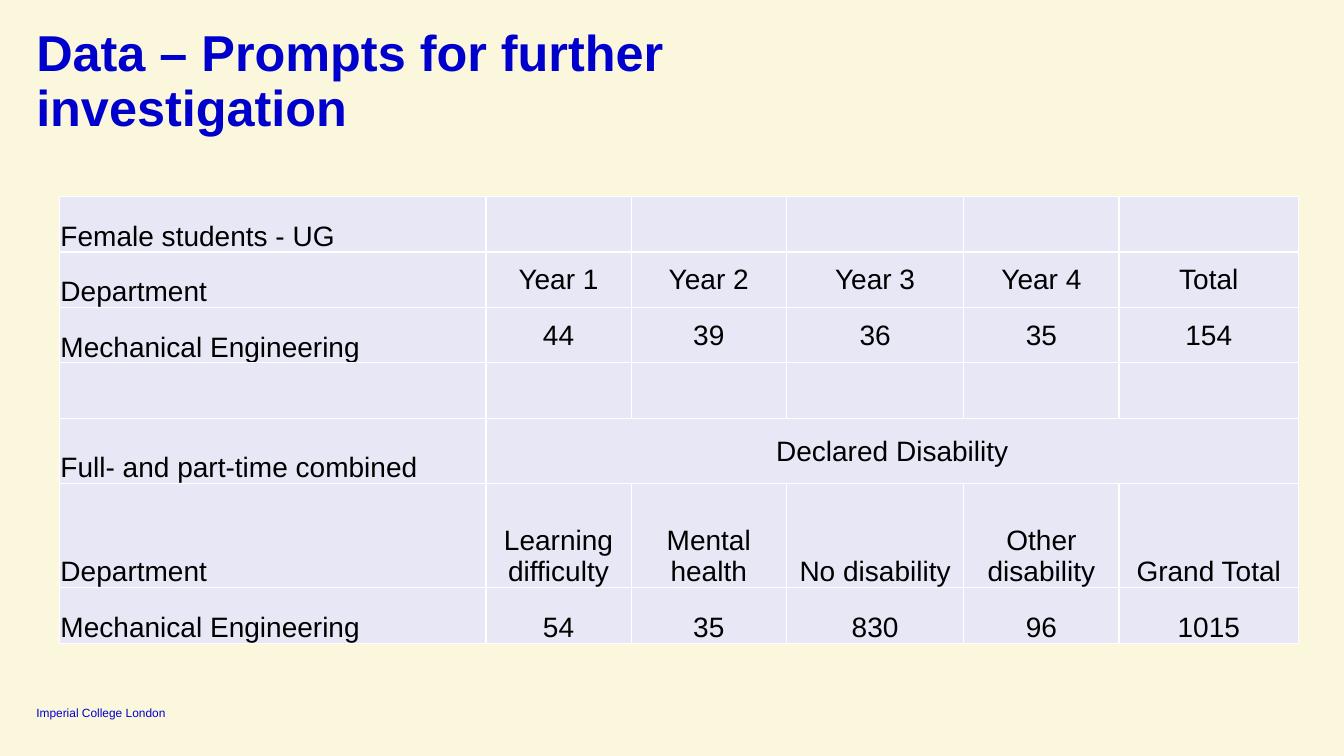
from dataclasses import dataclass

from lxml.etree import SubElement
from pptx import Presentation
from pptx.dml.color import RGBColor as RGB
from pptx.enum.text import MSO_ANCHOR as Anchor, MSO_AUTO_SIZE as AutoSize, PP_ALIGN as Align
from pptx.oxml.ns import qn
from pptx.table import Table, _Cell as Cell
from pptx.text.text import TextFrame
from pptx.util import Inches, Pt


@dataclass(frozen=True)
class Theme:
    font: str = "Arial"
    background: str = "FBF7DC"
    accent: str = "0000CD"
    text: str = "000000"
    cell: str = "E7E7F6"
    border: str = "FFFFFF"
    border_pt: float = 1
    title_pt: float = 36
    table_pt: float = 20
    footer_pt: float = 8.5


@dataclass(frozen=True)
class Row:
    label: str = ""
    values: tuple[str, ...] = ()
    height: float = 0.55
    anchor: Anchor = Anchor.BOTTOM
    merged: bool = False


THEME = Theme()
COLUMN_WIDTHS = (4.23, 1.44, 1.54, 1.76, 1.54, 1.78)
ROWS = (
    Row("Female students - UG"),
    Row("Department", ("Year 1", "Year 2", "Year 3", "Year 4", "Total"), anchor=Anchor.MIDDLE),
    Row("Mechanical Engineering", ("44", "39", "36", "35", "154"), anchor=Anchor.MIDDLE),
    Row(),
    Row("Full- and part-time combined", ("Declared Disability",), 0.65, Anchor.MIDDLE, True),
    Row("Department", ("Learning difficulty", "Mental health", "No disability",
                       "Other disability", "Grand Total"), 1.03),
    Row("Mechanical Engineering", ("54", "35", "830", "96", "1015")),
)


def write(tf: TextFrame, text: str, size: float, color: str, bold: bool = False,
          align: Align = Align.LEFT, spacing: float = 1.0) -> None:
    p = tf.paragraphs[0]
    p.alignment, p.line_spacing = align, spacing
    r = p.add_run()
    r.text = text
    r.font.color.rgb = RGB.from_string(color)
    for name, value in {"name": THEME.font, "size": Pt(size), "bold": bold}.items():
        setattr(r.font, name, value)


def format_frame(tf: TextFrame, anchor: Anchor) -> None:
    """Remove the insets and fix the size of a text frame."""
    frame_format = {"margin_left": 0, "margin_right": 0, "margin_top": 0, "margin_bottom": 0,
                    "word_wrap": True, "auto_size": AutoSize.NONE, "vertical_anchor": anchor}
    for name, value in frame_format.items():
        setattr(tf, name, value)


def add_borders(cell: Cell) -> None:
    tc_pr = cell._tc.get_or_add_tcPr()
    for side in ("lnL", "lnR", "lnT", "lnB"):
        line = SubElement(tc_pr, qn(f"a:{side}"), w=str(Pt(THEME.border_pt)))
        fill = SubElement(line, qn("a:solidFill"))
        SubElement(fill, qn("a:srgbClr"), val=THEME.border)


def format_cell(cell: Cell, anchor: Anchor) -> None:
    inset = Inches(0.01)
    cell_format = {"margin_left": inset, "margin_right": inset, "margin_top": inset,
                   "margin_bottom": 0, "vertical_anchor": anchor}
    for name, value in cell_format.items():
        setattr(cell, name, value)
    add_borders(cell)
    cell.fill.solid()
    cell.fill.fore_color.rgb = RGB.from_string(THEME.cell)


def fill_row(table: Table, index: int, row: Row) -> None:
    table.rows[index].height = Inches(row.height)
    last = len(COLUMN_WIDTHS) - 1
    for col in range(last + 1):
        format_cell(table.cell(index, col), row.anchor if col else Anchor.BOTTOM)
    if row.merged:
        table.cell(index, 1).merge(table.cell(index, last))
    for col, text in enumerate((row.label, *row.values)):
        if text:
            write(table.cell(index, col).text_frame, text, THEME.table_pt, THEME.text,
                  align=Align.CENTER if col else Align.LEFT)


def main() -> None:
    prs = Presentation()
    prs.slide_width, prs.slide_height = Inches(13.33), Inches(7.5)
    s = prs.slides.add_slide(prs.slide_layouts[5])
    s.background.fill.solid()
    s.background.fill.fore_color.rgb = RGB.from_string(THEME.background)

    title = s.shapes.title
    title.left, title.top, title.width, title.height = map(Inches, (0.36, 0.28, 9.35, 0.59))
    format_frame(title.text_frame, Anchor.TOP)
    write(title.text_frame, "Data – Prompts for further investigation", THEME.title_pt,
          THEME.accent, bold=True, spacing=0.9)

    footer = s.shapes.add_textbox(*map(Inches, (0.36, 6.99, 1.55, 0.15)))
    format_frame(footer.text_frame, Anchor.BOTTOM)
    write(footer.text_frame, "Imperial College London", THEME.footer_pt, THEME.accent)

    height = sum(row.height for row in ROWS)
    frame = s.shapes.add_table(len(ROWS), len(COLUMN_WIDTHS), Inches(0.59), Inches(1.95),
                               Inches(sum(COLUMN_WIDTHS)), Inches(height))
    table = frame.table
    table.first_row = table.horz_banding = False
    for column, width in zip(table.columns, COLUMN_WIDTHS):
        column.width = Inches(width)
    for index, row in enumerate(ROWS):
        fill_row(table, index, row)

    prs.save("out.pptx")


if __name__ == "__main__":
    main()
